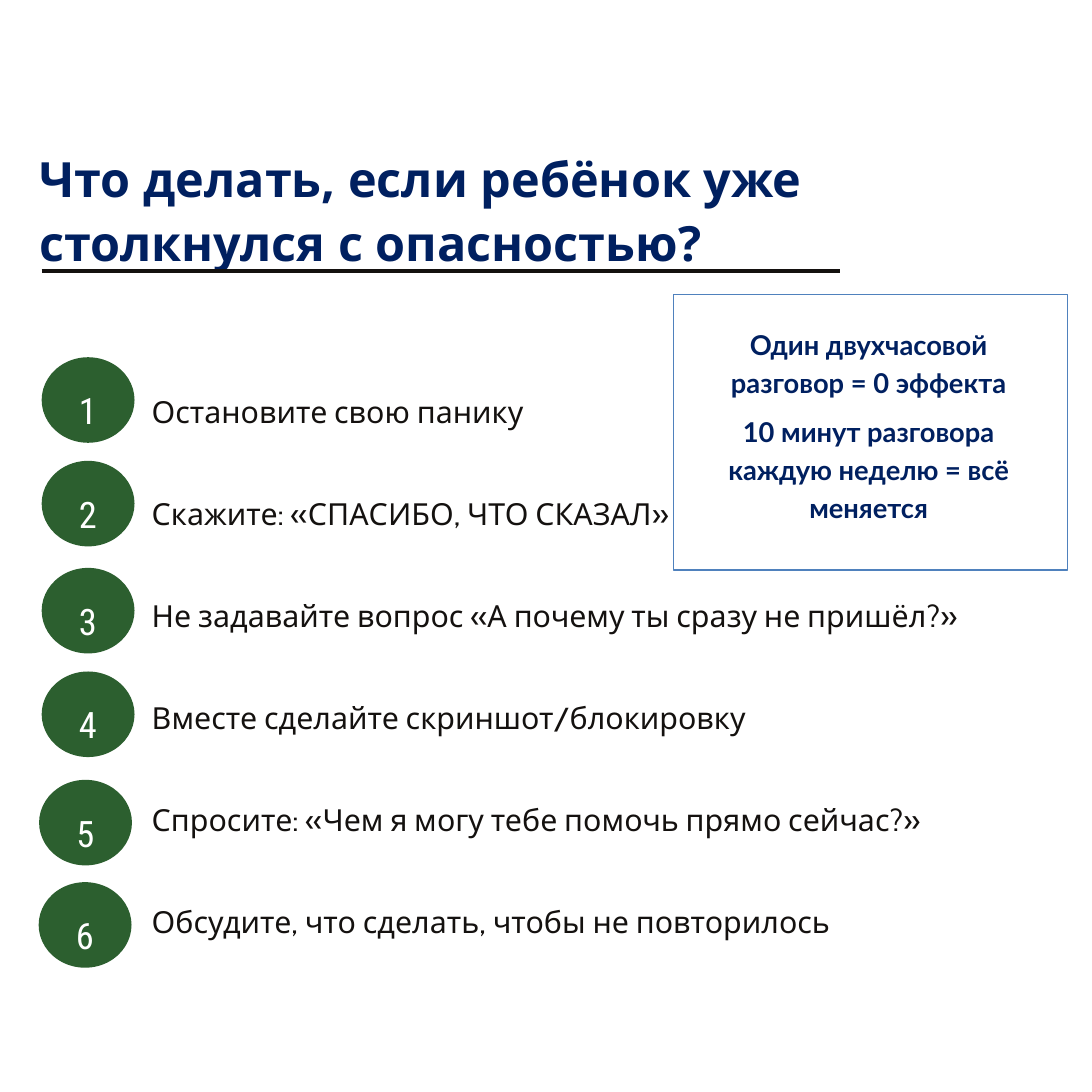
from dataclasses import dataclass

from lxml import etree
from pptx import Presentation
from pptx import util as u
from pptx.dml.color import RGBColor
from pptx.enum import shapes, text
from pptx.oxml import ns


@dataclass(frozen=True)
class Theme:
    navy: str = "002060"
    ink: str = "14110F"
    green: str = "2C5F2F"
    blue: str = "4F81BD"
    white: str = "FFFFFF"
    title_size: float = 32
    badge_size: float = 24
    step_size: float = 20
    callout_size: float = 18


@dataclass(frozen=True)
class Box:
    left: float
    top: float
    width: float
    height: float

    def lengths(self):
        return [u.Cm(side) for side in (self.left, self.top, self.width, self.height)]

    def inner(self, left, top, width, height):
        return Box(self.left + left, self.top + top, width, height)


THEME = Theme()
TITLE = "Что делать, если ребёнок уже столкнулся с опасностью?"
STEPS = [
    "Остановите свою панику",
    "Скажите: «СПАСИБО, ЧТО СКАЗАЛ»",
    "Не задавайте вопрос «А почему ты сразу не пришёл?»",
    "Вместе сделайте скриншот/блокировку",
    "Спросите: «Чем я могу тебе помочь прямо сейчас?»",
    "Обсудите, что сделать, чтобы не повторилось",
]
ADVICE = [
    "Один двухчасовой разговор = 0 эффекта",
    "10 минут разговора каждую неделю = всё меняется",
]
BADGE_CORNERS = [(0.07, 0), (0.07, 2.41), (0.07, 4.9), (0.07, 7.31), (0.01, 9.83), (0, 12.21)]


def apply(target, values):
    for name, value in values.items():
        setattr(target, name, value)


def write(shape, lines, color, font, layout, insets=(0, 0, 0, 0), gap=None):
    frame = shape.text_frame
    sides = ("margin_left", "margin_top", "margin_right", "margin_bottom")
    apply(frame, {side: u.Cm(inset) for side, inset in zip(sides, insets)})
    apply(frame, {
        "word_wrap": True,
        "vertical_anchor": text.MSO_ANCHOR.TOP,
        "auto_size": text.MSO_AUTO_SIZE.SHAPE_TO_FIT_TEXT,
    })
    for index, line in enumerate(lines):
        para = frame.add_paragraph() if index else frame.paragraphs[0]
        apply(para, layout)
        if index and gap:
            para.space_before = gap
        span = para.add_run()
        span.text = line
        apply(span.font, font)
        span.font.color.rgb = RGBColor.from_string(color)


def fill_shape(shape, color):
    shape.shadow.inherit = False
    shape.fill.solid()
    shape.fill.fore_color.rgb = RGBColor.from_string(color)


def draw_title(page, box):
    title = page.shapes.add_textbox(*box.lengths())
    write(title, [TITLE], THEME.navy,
          {"name": "Noto Sans", "size": u.Pt(THEME.title_size), "bold": True},
          {"line_spacing": 1.1})
    start, end, level = box.left + 0.06, box.left + 18.62, box.top + 2.97
    rule = page.shapes.add_connector(
        shapes.MSO_CONNECTOR.STRAIGHT, u.Cm(start), u.Cm(level), u.Cm(end), u.Cm(level))
    rule.line.color.rgb = RGBColor.from_string(THEME.ink)
    rule.line.width = u.Pt(2.25)
    etree.SubElement(rule._element.spPr, ns.qn("a:effectLst"))


def draw_badge(page, box, number):
    group = page.shapes.add_group_shape()
    disc = group.shapes.add_shape(shapes.MSO_SHAPE.OVAL, *box.lengths())
    fill_shape(disc, THEME.green)
    disc.line.fill.background()
    label = group.shapes.add_textbox(*box.inner(0.29, 0.04, 1.57, 1.52).lengths())
    write(label, [str(number)], THEME.white,
          {"name": "Roboto Condensed", "size": u.Pt(THEME.badge_size)},
          {"alignment": text.PP_ALIGN.CENTER, "line_spacing": u.Pt(48)})


def draw_steps(page, box):
    listing = page.shapes.add_textbox(*box.inner(2.63, 0.5, 21.92, 13.21).lengths())
    write(listing, STEPS, THEME.ink,
          {"name": "Cabin", "size": u.Pt(THEME.step_size)},
          {"line_spacing": u.Pt(33.6)}, gap=u.Pt(33.6))
    for number, (left, top) in enumerate(BADGE_CORNERS, 1):
        draw_badge(page, box.inner(left, top, 2.16, 1.99), number)


def draw_callout(page, box):
    panel = page.shapes.add_shape(shapes.MSO_SHAPE.RECTANGLE, *box.lengths())
    fill_shape(panel, THEME.white)
    panel.line.color.rgb = RGBColor.from_string(THEME.blue)
    panel.line.width = u.Pt(0.75)
    write(panel, ADVICE, THEME.navy,
          {"name": "Lato", "size": u.Pt(THEME.callout_size), "bold": True},
          {"alignment": text.PP_ALIGN.CENTER, "line_spacing": 1.15, "space_after": u.Pt(8)},
          insets=(0.84, 0.66, 0.94, 0.76))


def main():
    deck = Presentation()
    apply(deck, {"slide_width": u.Cm(25.4), "slide_height": u.Cm(25.4)})
    page = deck.slides.add_slide(deck.slide_layouts[6])
    draw_title(page, Box(0.91, 3.33, 24.03, 3))
    draw_steps(page, Box(0.9, 8.31, 24.55, 14.2))
    draw_callout(page, Box(15.67, 6.86, 9.17, 6.4))
    deck.save("out.pptx")


if __name__ == "__main__":
    main()
